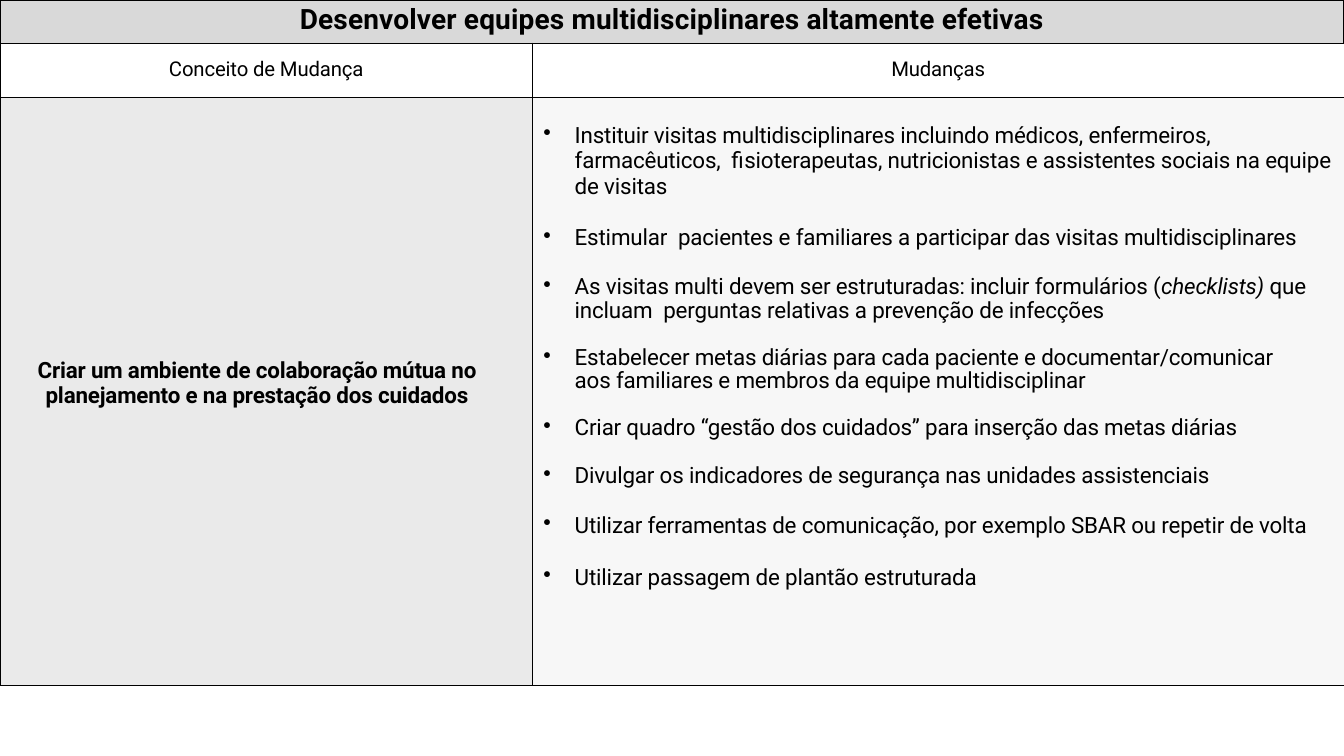
import pptx
import pptx.util
import pptx.dml.color
import pptx.enum.text
from lxml import etree
from pptx.oxml.ns import qn

Inches, Pt = pptx.util.Inches, pptx.util.Pt
CENTER = pptx.enum.text.PP_ALIGN.CENTER
LEFT = pptx.enum.text.PP_ALIGN.LEFT

TITLE = "Desenvolver equipes multidisciplinares altamente efetivas"
HEADINGS = ["Conceito de Mudança", "Mudanças"]
CONCEPT = "Criar um ambiente de colaboração mútua no planejamento e na prestação dos cuidados"

# text runs (text, italic), space before, line spacing, bulleted
CHANGES = [
    ([("Instituir visitas multidisciplinares incluindo médicos, enfermeiros, "
       "farmacêuticos,  fisioterapeutas, nutricionistas e assistentes sociais na "
       "equipe de visitas", False)], 0, 0.98, True),
    ([("Estimular  pacientes e familiares a participar das visitas multidisciplinares",
       False)], 18.5, 0.98, True),
    ([("As visitas multi devem ser estruturadas: incluir formulários (", False),
      ("checklists) ", True),
      ("que incluam  perguntas relativas a prevenção de infecções", False)],
     18, Pt(17), True),
    ([("Estabelecer metas diárias para cada paciente e documentar/comunicar", False)],
     17.5, Pt(16.3), True),
    ([("aos familiares e membros da equipe multidisciplinar", False)],
     0, Pt(16.5), False),
    ([("Criar quadro “gestão dos cuidados” para inserção das metas diárias", False)],
     16.5, Pt(17.1), True),
    ([("Divulgar os indicadores de segurança nas unidades assistenciais", False)],
     17.1, Pt(17), True),
    ([("Utilizar ferramentas de comunicação, por exemplo SBAR ou repetir de volta",
       False)], 17.3, 0.98, True),
    ([("Utilizar passagem de plantão estruturada", False)], 18.8, 0.98, True),
]

THEME = {
    "font": "Roboto", "ink": "000000",
    "title_fill": "D9D9D9", "heading_fill": "FFFFFF",
    "concept_fill": "EAEAEA", "changes_fill": "F7F7F7",
    "title_size": 20, "heading_size": 14.5, "body_size": 16,
    "outer_left": 0.25, "outer_top": 0.25, "outer_right": 0.5, "inner": 1,
}
COLUMN_WIDTHS = [5.28, 8.05]
ROW_HEIGHTS = [0.43, 0.54, 5.83]


def rgb(name):
    return pptx.dml.color.RGBColor.from_string(THEME[name])


def prepare(cell, fill, top, right=0):
    cell.fill.solid()
    cell.fill.fore_color.rgb = rgb(fill)
    cell.margin_left = cell.margin_bottom = 0
    cell.margin_top, cell.margin_right = Inches(top), Inches(right)


def write(paragraph, runs, size, bold=False, align=LEFT, tracking=-10):
    paragraph.alignment = align
    for words, italic in runs:
        run = paragraph.add_run()
        run.text = words
        font = run.font
        font.name, font.size = THEME["font"], Pt(THEME[size])
        font.bold, font.italic = bold, italic
        font.color.rgb = rgb("ink")
        run._r.get_or_add_rPr().set("spc", str(tracking))


def indent(paragraph, bulleted):
    properties = paragraph._p.get_or_add_pPr()
    properties.set("marL", str(Inches(0.42)))
    properties.set("indent", str(Inches(-0.31) if bulleted else 0))
    if bulleted:
        etree.SubElement(properties, qn("a:buChar")).set("char", "•")


def add_borders(cell, row, column):
    widths = {
        "a:lnL": THEME["inner"] if column else THEME["outer_left"],
        "a:lnR": THEME["outer_right"] if column else THEME["inner"],
        "a:lnT": THEME["inner"] if row else THEME["outer_top"],
        "a:lnB": THEME["inner"],
    }
    properties = cell._tc.get_or_add_tcPr()
    for position, (side, width) in enumerate(widths.items()):
        border = etree.Element(qn(side), w=str(Pt(width)))
        paint = etree.SubElement(border, qn("a:solidFill"))
        etree.SubElement(paint, qn("a:srgbClr")).set("val", THEME["ink"])
        properties.insert(position, border)


def main():
    deck = pptx.Presentation()
    deck.slide_width, deck.slide_height = Inches(13.33), Inches(7.5)
    slide = deck.slides.add_slide(deck.slide_layouts[6])
    table = slide.shapes.add_table(
        len(ROW_HEIGHTS), len(COLUMN_WIDTHS), 0, 0,
        Inches(sum(COLUMN_WIDTHS)), Inches(sum(ROW_HEIGHTS))).table
    table.first_row = table.horz_banding = False
    for column, width in zip(table.columns, COLUMN_WIDTHS):
        column.width = Inches(width)
    for row, height in zip(table.rows, ROW_HEIGHTS):
        row.height = Inches(height)

    title = table.cell(0, 0)
    title.merge(table.cell(0, 1))
    prepare(title, "title_fill", 0.03)
    write(title.text_frame.paragraphs[0], [(TITLE, False)], "title_size",
          bold=True, align=CENTER, tracking=10)

    for column, heading in enumerate(HEADINGS):
        cell = table.cell(1, column)
        prepare(cell, "heading_fill", 0.14)
        write(cell.text_frame.paragraphs[0], [(heading, False)], "heading_size",
              align=CENTER)

    concept = table.cell(2, 0)
    prepare(concept, "concept_fill", 2.58, right=0.18)
    statement = concept.text_frame.paragraphs[0]
    statement.line_spacing = 0.98
    write(statement, [(CONCEPT, False)], "body_size", bold=True, align=CENTER)

    changes = table.cell(2, 1)
    prepare(changes, "changes_fill", 0.25)
    frame = changes.text_frame
    for number, (runs, before, spacing, bulleted) in enumerate(CHANGES):
        change = frame.add_paragraph() if number else frame.paragraphs[0]
        change.line_spacing, change.space_before = spacing, Pt(before)
        indent(change, bulleted)
        write(change, runs, "body_size")

    for row in range(len(ROW_HEIGHTS)):
        for column in range(len(COLUMN_WIDTHS)):
            add_borders(table.cell(row, column), row, column)

    deck.save("out.pptx")


if __name__ == "__main__":
    main()
